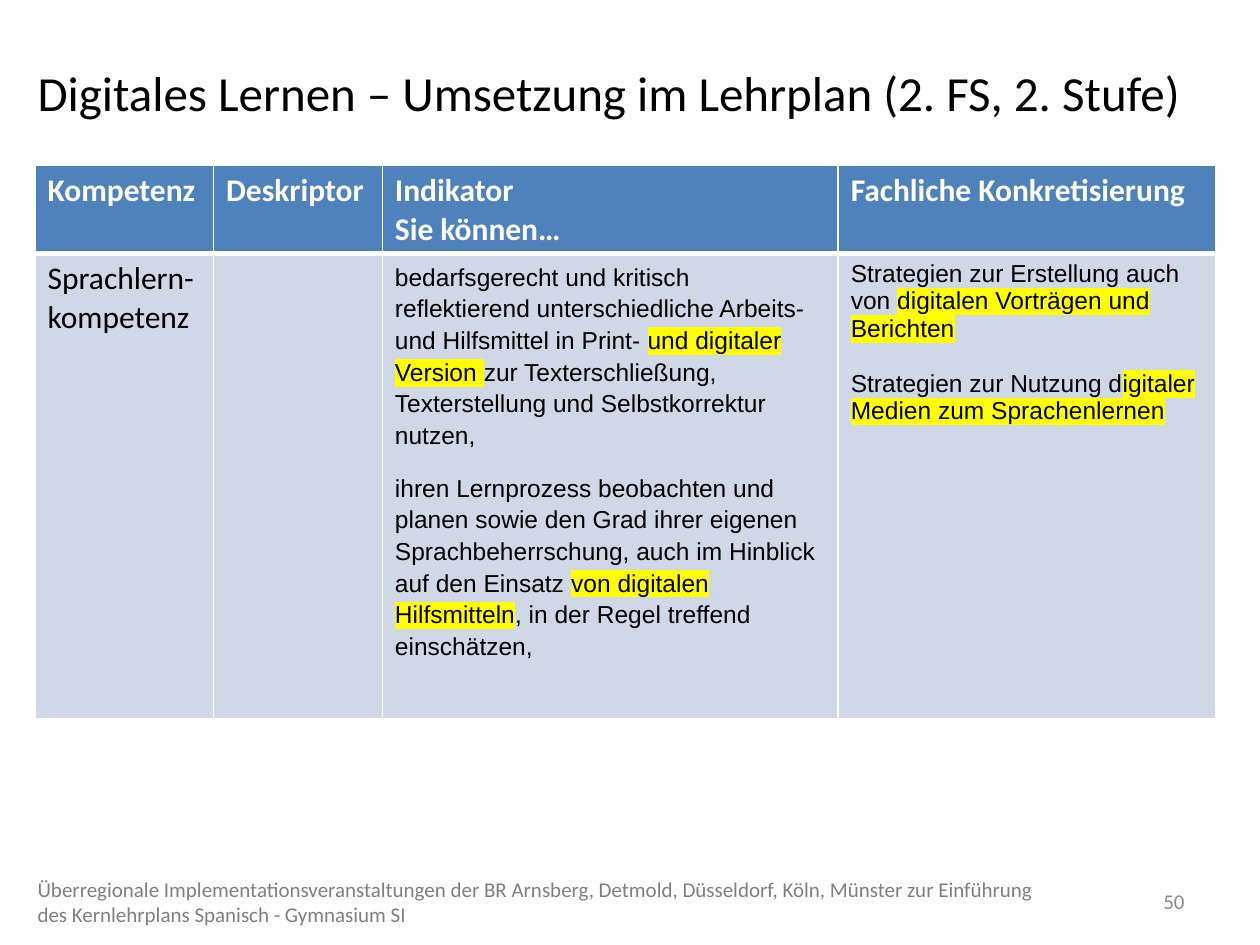
import pptx
import pptx.dml.color
import pptx.enum.text
import pptx.oxml
import pptx.oxml.ns
import pptx.util

Pt = pptx.util.Pt
RGBColor = pptx.dml.color.RGBColor
PP_ALIGN = pptx.enum.text.PP_ALIGN
MSO_ANCHOR = pptx.enum.text.MSO_ANCHOR
qn = pptx.oxml.ns.qn

BLACK = RGBColor(0x00, 0x00, 0x00)
WHITE = RGBColor(0xFF, 0xFF, 0xFF)
BLUE = RGBColor(0x4F, 0x81, 0xBD)
PALE = RGBColor(0xD0, 0xD8, 0xE8)
YELLOW = RGBColor(0xFF, 0xFF, 0x00)
GREY = RGBColor(0x80, 0x80, 0x80)
NUMBER_GREY = RGBColor(0x8C, 0x8C, 0x8C)

# Content: a cell is a list of paragraphs, a paragraph a list of
# (text, highlighted) runs
TITLE = "Digitales Lernen – Umsetzung im Lehrplan (2. FS, 2. Stufe)"
FOOTER = ("Überregionale Implementationsveranstaltungen der BR Arnsberg, Detmold, "
          "Düsseldorf, Köln, Münster zur Einführung des Kernlehrplans Spanisch - "
          "Gymnasium SI")
PAGE = "50"
HEADERS = [["Kompetenz"], ["Deskriptor"], ["Indikator", "Sie können…"],
           ["Fachliche Konkretisierung"]]
COMPETENCE = [[("Sprachlern-kompetenz", False)]]
INDICATORS = [
    [("bedarfsgerecht und kritisch reflektierend unterschiedliche Arbeits- und "
      "Hilfsmittel in Print- ", False),
     ("und digitaler Version ", True),
     ("zur Texterschließung, Texterstellung und Selbstkorrektur nutzen,", False)],
    [("ihren Lernprozess beobachten und planen sowie den Grad ihrer eigenen "
      "Sprachbeherrschung, auch im Hinblick auf den Einsatz ", False),
     ("von digitalen Hilfsmitteln", True),
     (", in der Regel treffend einschätzen,", False)],
]
SUBJECT = [
    [("Strategien zur Erstellung auch von ", False),
     ("digitalen Vorträgen und Berichten", True)],
    [("Strategien zur Nutzung d", False),
     ("igitaler Medien zum Sprachenlernen", True)],
]
COL_WIDTHS = [102, 96.5, 260.5, 215.5]
ROW_HEIGHTS = [50, 266]


def style_run(r, font, size, color, bold=False):
    r.font.name, r.font.size, r.font.bold = font, Pt(size), bold
    r.font.color.rgb = color


def highlight(r):
    xml = '<a:highlight %s><a:srgbClr val="%s"/></a:highlight>' % (
        pptx.oxml.ns.nsdecls("a"), YELLOW)
    fill = r.font._element.find(qn("a:solidFill"))
    fill.addnext(pptx.oxml.parse_xml(xml))


def add_text(s, text, box, size, color, align=PP_ALIGN.LEFT, anchor=MSO_ANCHOR.TOP):
    tf = s.shapes.add_textbox(*map(Pt, box)).text_frame
    tf.word_wrap = True
    tf.vertical_anchor = anchor
    tf.text = text
    p = tf.paragraphs[0]
    p.alignment = align
    style_run(p.runs[0], "Calibri", size, color)


def format_cell(cell, fill, bottom):
    tcPr = cell._tc.get_or_add_tcPr()
    for side, width in (("L", 1), ("R", 1), ("T", 1), ("B", bottom)):
        tcPr.append(pptx.oxml.parse_xml(
            '<a:ln%s %s w="%d"><a:solidFill><a:srgbClr val="%s"/></a:solidFill></a:ln%s>'
            % (side, pptx.oxml.ns.nsdecls("a"), Pt(width), WHITE, side)))
    cell.fill.solid()
    cell.fill.fore_color.rgb = fill


def fill_text(cell, paragraphs, font, size, color, bold=False,
              spacing=None, after=0, before=0):
    tf = cell.text_frame
    for i, runs in enumerate(paragraphs):
        p = tf.add_paragraph() if i else tf.paragraphs[0]
        p.space_after = Pt(after)
        if spacing:
            p.line_spacing = spacing
        if i:
            p.space_before = Pt(before)
        for text, marked in runs:
            r = p.add_run()
            r.text = text
            style_run(r, font, size, color, bold)
            if marked:
                highlight(r)


prs = pptx.Presentation()
prs.slide_width, prs.slide_height = Pt(720), Pt(540)
s = prs.slides.add_slide(prs.slide_layouts[6])

# Page number
add_text(s, PAGE, (638, 500.5, 46, 29), 12, NUMBER_GREY,
         PP_ALIGN.RIGHT, MSO_ANCHOR.MIDDLE)

# Competence table
table = s.shapes.add_table(2, 4, Pt(20), Pt(94.5), Pt(sum(COL_WIDTHS)),
                           Pt(sum(ROW_HEIGHTS))).table
for column, width in zip(table.columns, COL_WIDTHS):
    column.width = Pt(width)
for row, height in zip(table.rows, ROW_HEIGHTS):
    row.height = Pt(height)
for c, lines in enumerate(HEADERS):
    format_cell(table.cell(0, c), BLUE, 3)
    format_cell(table.cell(1, c), PALE, 1)
    fill_text(table.cell(0, c), [[(line, False)] for line in lines],
              "Calibri", 18, WHITE, bold=True)
fill_text(table.cell(1, 0), COMPETENCE, "Calibri", 18, BLACK)
fill_text(table.cell(1, 2), INDICATORS, "Arial", 14, BLACK, spacing=1.15, after=12)
fill_text(table.cell(1, 3), SUBJECT, "Arial", 14, BLACK, before=15.7)

# Title and footer
add_text(s, TITLE, (14.4, 32, 692, 41), 28, BLACK)
add_text(s, FOOTER, (14.4, 500.5, 595.5, 29), 12, GREY, anchor=MSO_ANCHOR.MIDDLE)

prs.save("out.pptx")
